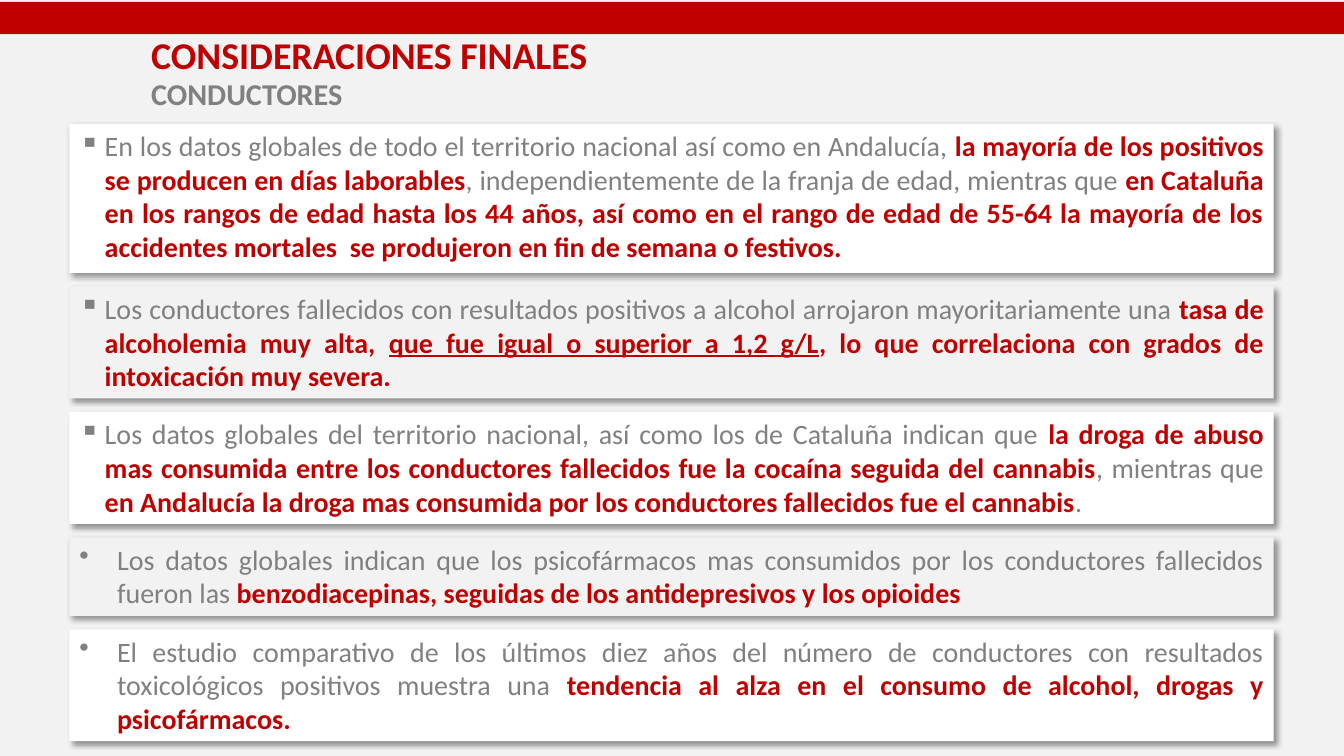
from dataclasses import dataclass

from lxml.etree import SubElement
from pptx import Presentation
from pptx.dml.color import RGBColor
from pptx.enum.shapes import MSO_SHAPE
from pptx.enum.text import MSO_ANCHOR, PP_ALIGN
from pptx.oxml.ns import qn
from pptx.util import Cm, Pt


@dataclass(frozen=True)
class Theme:
    red: RGBColor = RGBColor(0xC0, 0x00, 0x00)
    gray: RGBColor = RGBColor(0x80, 0x80, 0x80)
    white: RGBColor = RGBColor(0xFF, 0xFF, 0xFF)
    pale: RGBColor = RGBColor(0xF2, 0xF2, 0xF2)
    shadow: str = "000000"
    font: str = "Calibri"
    title_size: float = 27
    subtitle_size: float = 21.6
    body_size: float = 20


theme = Theme()


def add_run(paragraph, text, *, size=theme.body_size, color=theme.gray,
            bold=False, underline=False):
    run = paragraph.add_run()
    run.text = text
    run.font.name = theme.font
    run.font.size = Pt(size)
    run.font.color.rgb = color
    run.font.bold = bold
    run.font.underline = underline


def add_panel(left, top, width, height, color):
    """Add a rectangle with a plain fill, no outline and no shadow."""
    panel = slide.shapes.add_shape(MSO_SHAPE.RECTANGLE, left, top, width, height)
    panel.fill.solid()
    panel.fill.fore_color.rgb = color
    panel.line.fill.background()
    panel.shadow.inherit = False
    return panel


prs = Presentation()
prs.slide_width, prs.slide_height = Cm(33.87), Cm(19.05)
slide = prs.slides.add_slide(prs.slide_layouts[6])
slide.background.fill.solid()
slide.background.fill.fore_color.rgb = theme.pale

# Heading
heading = slide.shapes.add_textbox(Cm(3.56), Cm(0.86), Cm(30.35), Cm(2.01)).text_frame
heading.word_wrap = True
heading.vertical_anchor = MSO_ANCHOR.MIDDLE
title = heading.paragraphs[0]
title.line_spacing = 0.95
add_run(title, "CONSIDERACIONES FINALES", size=theme.title_size, color=theme.red, bold=True)
title.add_line_break()
add_run(title, "CONDUCTORES", size=theme.subtitle_size, color=theme.gray, bold=True)

add_panel(Cm(0), Cm(0.05), prs.slide_width, Cm(0.81), theme.red)

# Conclusions: height, bullet, indent, runs of text
plain = {}
key = {"color": theme.red, "bold": True}
key_underlined = {**key, "underline": True}

conclusions = [
    (3.76, "▪", 0.64, [
        ("En los datos globales de todo el territorio nacional así como en Andalucía, ", plain),
        ("la mayoría de los positivos se producen en días laborables", key),
        (", independientemente de la franja de edad, mientras que ", plain),
        ("en Cataluña en los rangos de edad hasta los 44 años, así como en el rango de edad "
         "de 55-64 la mayoría de los accidentes mortales  se produjeron en fin de semana "
         "o festivos.", key),
    ]),
    (2.82, "▪", 0.64, [
        ("Los conductores fallecidos con resultados positivos a alcohol arrojaron "
         "mayoritariamente una ", plain),
        ("tasa de alcoholemia muy alta, ", key),
        ("que fue igual o superior a 1,2 g/L", key_underlined),
        (", lo que correlaciona con grados de intoxicación muy severa.", key),
    ]),
    (2.82, "▪", 0.64, [
        ("Los datos globales del territorio nacional, así como los de Cataluña indican que ",
         plain),
        ("la droga de abuso mas consumida entre los conductores fallecidos fue la cocaína "
         "seguida del cannabis", key),
        (", mientras que ", plain),
        ("en Andalucía la droga mas consumida por los conductores fallecidos fue el cannabis",
         key),
        (".", plain),
    ]),
    (1.98, "•", 0.95, [
        ("Los datos globales indican que los psicofármacos mas consumidos por los conductores "
         "fallecidos fueron las ", plain),
        ("benzodiacepinas, seguidas de los antidepresivos y los opioides", key),
    ]),
    (2.82, "•", 0.95, [
        ("El estudio comparativo de los últimos diez años del número de conductores con "
         "resultados toxicológicos positivos muestra una ", plain),
        ("tendencia al alza en el consumo de alcohol, drogas y psicofármacos.", key),
    ]),
]

top, gap = 3.12, 0.34
for index, (height, bullet, indent, runs) in enumerate(conclusions):
    card = add_panel(Cm(1.75), Cm(top), Cm(30.35), Cm(height),
                     theme.pale if index % 2 else theme.white)
    top += height + gap

    effects = card.element.spPr.find(qn("a:effectLst"))
    shadow = SubElement(effects, qn("a:outerShdw"), blurRad=str(Pt(4)), dist=str(Pt(3)),
                        dir=str(45 * 60000), algn="tl", rotWithShape="0")
    shadow_color = SubElement(shadow, qn("a:srgbClr"), val=theme.shadow)
    SubElement(shadow_color, qn("a:alpha"), val="40000")

    card.text_frame.word_wrap = True
    card.text_frame.vertical_anchor = MSO_ANCHOR.TOP
    conclusion = card.text_frame.paragraphs[0]
    conclusion.alignment = PP_ALIGN.JUSTIFY
    properties = conclusion._p.get_or_add_pPr()
    properties.set("marL", str(Cm(indent)))
    properties.set("indent", str(-Cm(indent)))
    SubElement(properties, qn("a:buChar"), char=bullet)
    for text, style in runs:
        add_run(conclusion, text, **style)

prs.save("out.pptx")
